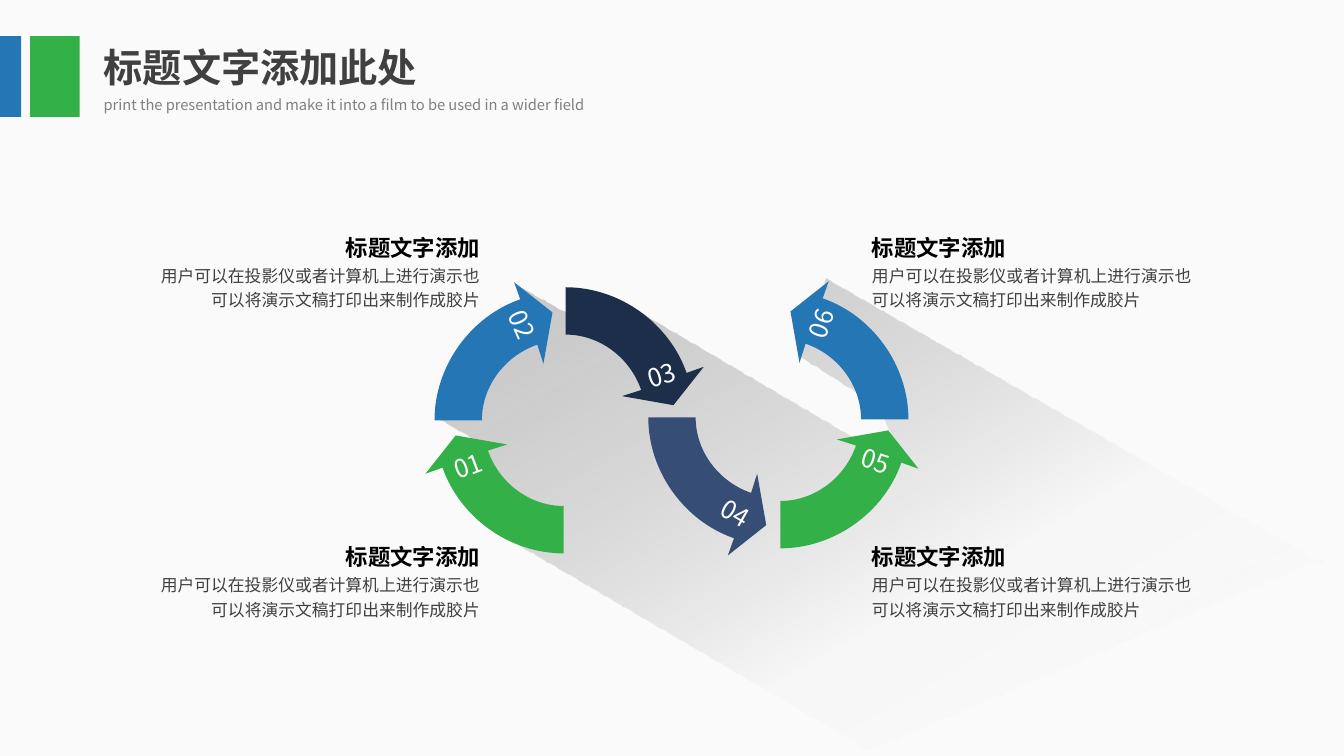
from lxml.etree import SubElement, fromstring
from pptx import Presentation
from pptx.dml.color import RGBColor
from pptx.enum.shapes import MSO_SHAPE
from pptx.enum.text import MSO_ANCHOR, MSO_AUTO_SIZE, PP_ALIGN
from pptx.oxml.ns import nsdecls, qn
from pptx.util import Inches, Pt

FONT = "Noto Sans CJK SC"
GREEN = RGBColor(0x33, 0xB0, 0x48)
BLUE = RGBColor(0x25, 0x76, 0xB5)
NAVY = RGBColor(0x1D, 0x2E, 0x4B)
SLATE = RGBColor(0x36, 0x4D, 0x76)
DARK = RGBColor(0x40, 0x40, 0x40)
GRAY = RGBColor(0x80, 0x80, 0x80)
BLACK = RGBColor(0, 0, 0)
WHITE = RGBColor(0xFF, 0xFF, 0xFF)
PAPER = RGBColor(0xFA, 0xFA, 0xFA)

HEAD = "标题文字添加"
BODY = "用户可以在投影仪或者计算机上进行演示也可以将演示文稿打印出来制作成胶片"

LEFT, RIGHT, UP, DOWN = (-1, 0), (1, 0), (0, -1), (0, 1)
ARROWS = [
    ("01", 5.59, 5.49, LEFT, UP, GREEN, 339.6),
    ("02", 4.31, 4.17, UP, RIGHT, BLUE, 66.7),
    ("03", 5.61, 2.85, RIGHT, DOWN, NAVY, 341.9),
    ("04", 6.43, 4.14, DOWN, RIGHT, SLATE, 30),
    ("05", 7.74, 5.44, RIGHT, UP, GREEN, 18.3),
    ("06", 9.01, 4.16, UP, LEFT, BLUE, 289.3),
]
EDGE = [
    (1.07, 1.17), (1.37, 0.79), (1.2, 0.85), (1.03, 0.36), (0.54, 0), (0, 0),
    (0, 0.47), (0.34, 0.47), (0.64, 0.7), (0.75, 1.02), (0.56, 1.08),
]
BENDS = (2, 6)
SHADE = [
    (13.14, 5.6), (13.14, 5.52), (8.62, 7.44), (4.95, 5.29), (4.78, 4.4),
    (4.33, 4.14), (5.16, 3.14), (5.29, 3.08), (5.13, 2.83), (6.03, 3.33),
    (6.32, 3.08), (8.67, 4.46), (8.83, 4.29), (8.71, 4.03), (7.94, 3.54),
    (8.19, 2.76),
]
STOPS = [(0, "000000", 20), (61, "F2F2F2", 34), (100, "F2F2F2", 0)]


def write(shape, text, size, color, bold=False, align=PP_ALIGN.LEFT, gap=1.0, wrap=True):
    """Fill a shape with one styled paragraph, centred vertically."""
    frame = shape.text_frame
    frame.text = text
    frame.word_wrap = wrap
    frame.auto_size = MSO_AUTO_SIZE.NONE
    frame.vertical_anchor = MSO_ANCHOR.MIDDLE
    para = frame.paragraphs[0]
    para.alignment = align
    para.line_spacing = gap
    run = para.runs[0]
    run.font.name = FONT
    run.font.size = Pt(size)
    run.font.bold = bold
    run.font.color.rgb = color
    SubElement(run.font._element, qn("a:ea")).set("typeface", FONT)


def add_text(slide, x, y, w, h, *args, **style):
    """Add a text box and return it."""
    box = slide.shapes.add_textbox(Inches(x), Inches(y), Inches(w), Inches(h))
    write(box, *args, **style)
    return box


def paint(shape, color):
    """Give a shape a flat fill with no line or shadow."""
    shape.shadow.inherit = False
    shape.fill.solid()
    shape.fill.fore_color.rgb = color
    shape.line.fill.background()


def add_path(slide, points):
    """Draw a closed outline through points in inches."""
    spots = [(Inches(x), Inches(y)) for x, y in points]
    pen = slide.shapes.build_freeform(*spots[0])
    pen.add_line_segments(spots[1:], close=True)
    return pen.convert_to_shape()


def bend(shape, starts):
    """Turn three lines from each start into one cubic curve."""
    lines = list(shape._element.iter(qn("a:lnTo")))
    for start in starts:
        trio = lines[start:start + 3]
        curve = fromstring(f'<a:cubicBezTo {nsdecls("a")}/>')
        trio[0].addprevious(curve)
        for line in trio:
            curve.append(line[0])
            line.getparent().remove(line)


def add_shade(slide):
    """Draw the long fading shadow behind the arrows."""
    shape = add_path(slide, SHADE)
    paint(shape, BLACK)
    stops = "".join(
        f'<a:gs pos="{pos * 1000}"><a:srgbClr val="{tone}">'
        f'<a:alpha val="{alpha * 1000}"/></a:srgbClr></a:gs>'
        for pos, tone, alpha in STOPS
    )
    grad = fromstring(
        f'<a:gradFill {nsdecls("a")} rotWithShape="1"><a:gsLst>{stops}</a:gsLst>'
        '<a:lin ang="3600000" scaled="0"/></a:gradFill>'
    )
    props = shape._element.spPr
    props.replace(props.find(qn("a:solidFill")), grad)


def add_arrow(slide, label, x, y, along, across, color, turn):
    """Draw a bent arrow from its outer tail corner, with its number."""
    def place(u, v):
        return tuple(o + u * a + v * b for o, a, b in zip((x, y), along, across))

    arrow = add_path(slide, [place(u, v) for u, v in EDGE])
    bend(arrow, BENDS)
    paint(arrow, color)
    mid, base = place(0.95, 0.87)
    box = add_text(slide, mid - 0.24, base - 0.2, 0.48, 0.4, label, 18, WHITE,
                   align=PP_ALIGN.CENTER, wrap=False)
    box.rotation = turn


def add_header(slide, x, y):
    """Place the colour bars, title and subtitle."""
    for left, width, color in ((x + 0.3, 0.49, GREEN), (x, 0.21, BLUE)):
        bar = slide.shapes.add_shape(MSO_SHAPE.RECTANGLE, Inches(left), Inches(y),
                                     Inches(width), Inches(0.8))
        paint(bar, color)
    title = slide.shapes.title
    title.left, title.top = Inches(x + 0.93), Inches(y + 0.02)
    title.width, title.height = Inches(3.6), Inches(0.57)
    write(title, "标题文字添加此处", 28, DARK, bold=True)
    add_text(slide, x + 0.93, y + 0.51, 5.34, 0.3,
             "print the presentation and make it into a film to be used in a wider field",
             10.5, GRAY, gap=1.2)


def add_note(slide, x, y, align):
    """Place a heading over its body text."""
    shift = 1.13 if align == PP_ALIGN.RIGHT else 0
    add_text(slide, x, y + 0.31, 3.37, 0.59, BODY, 12, DARK, align=align, gap=1.2)
    add_text(slide, x + shift, y, 2.24, 0.4, HEAD, 16, BLACK, bold=True, align=align, gap=1.2)


def main():
    """Build and save the slide."""
    deck = Presentation()
    deck.slide_width, deck.slide_height = Inches(13.33), Inches(7.5)
    slide = deck.slides.add_slide(deck.slide_layouts[5])
    slide.background.fill.solid()
    slide.background.fill.fore_color.rgb = PAPER
    add_shade(slide)
    for arrow in ARROWS:
        add_arrow(slide, *arrow)
    add_header(slide, 0, 0.36)
    for x, align in ((8.55, PP_ALIGN.JUSTIFY), (1.49, PP_ALIGN.RIGHT)):
        for y in (2.23, 5.3):
            add_note(slide, x, y, align)
    deck.save("out.pptx")


if __name__ == "__main__":
    main()
